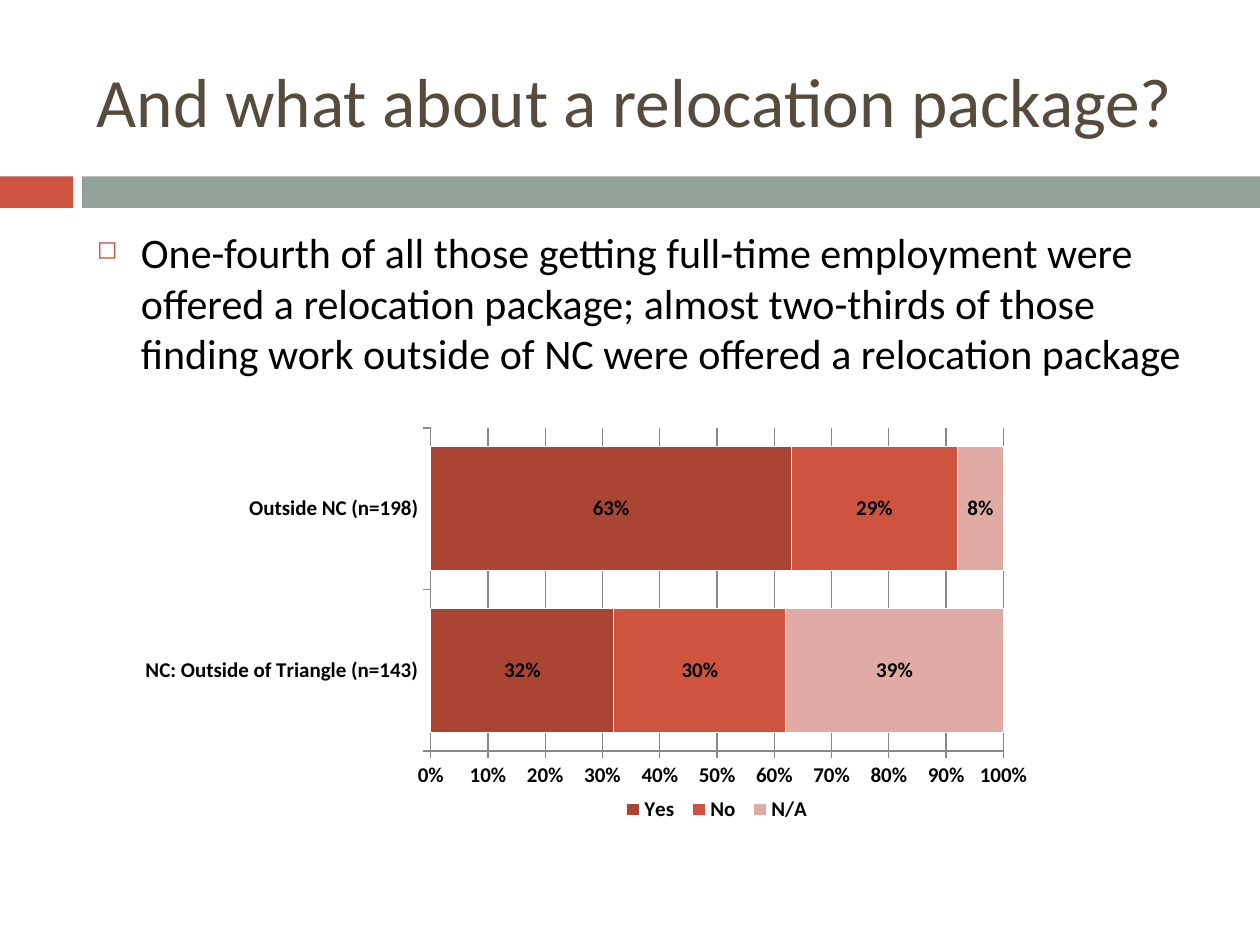
import pptx
import pptx.chart.data
import pptx.dml.color
import pptx.enum.chart
import pptx.enum.shapes
import pptx.enum.text
import pptx.oxml
import pptx.util
from pptx.oxml.ns import qn
from pptx.util import Inches


def color(hex_text):
    return pptx.dml.color.RGBColor.from_string(hex_text)


def set_values(target, values):
    for name, value in values.items():
        setattr(target, name, value)


class SlideBuilder:
    FONT = "Calibri"
    BLACK, WHITE, BROWN, GRAY = "000000", "FFFFFF", "564B3C", "878787"
    RED, SAGE = "CF543F", "93A299"
    SERIES_COLORS = ["AA4433", RED, "E1ABA5"]

    def __init__(self, slide):
        self.slide = slide

    def style_font(self, font, size, hex_text, bold=False):
        set_values(font, {"name": self.FONT, "size": pptx.util.Pt(size), "bold": bold})
        font.color.rgb = color(hex_text)

    def bar(self, left, top, width, height, fill):
        kind = pptx.enum.shapes.MSO_SHAPE.RECTANGLE
        shape = self.slide.shapes.add_shape(kind, *map(Inches, (left, top, width, height)))
        shape.shadow.inherit = False
        shape.fill.solid()
        shape.fill.fore_color.rgb = color(fill)
        shape.line.fill.background()

    def text(self, box, words, size, hex_text, anchor):
        shape = self.slide.shapes.add_textbox(*map(Inches, box))
        set_values(shape.text_frame, {"word_wrap": True, "vertical_anchor": anchor})
        paragraph = shape.text_frame.paragraphs[0]
        run = paragraph.add_run()
        run.text = words
        self.style_font(run.font, size, hex_text)
        return paragraph

    def bullet(self, paragraph, symbol, hex_text, percent, indent):
        paragraph.space_before = pptx.util.Pt(7)
        properties = paragraph._p.get_or_add_pPr()
        properties.set("marL", str(Inches(indent)))
        properties.set("indent", str(-Inches(indent)))
        namespace = pptx.oxml.ns.nsdecls("a")
        for xml in (
            f'<a:buClr {namespace}><a:srgbClr val="{hex_text}"/></a:buClr>',
            f'<a:buSzPct {namespace} val="{percent * 1000}"/>',
            f'<a:buChar {namespace} char="{symbol}"/>',
        ):
            properties.append(pptx.oxml.parse_xml(xml))

    def layout(self, parent, before, x, y, w, h, inner=False):
        """Place a chart part by fractions of the chart area."""
        target = '<c:layoutTarget val="inner"/>' if inner else ""
        xml = (
            f'<c:layout {pptx.oxml.ns.nsdecls("c")}><c:manualLayout>{target}'
            '<c:xMode val="edge"/><c:yMode val="edge"/>'
            f'<c:x val="{x}"/><c:y val="{y}"/><c:w val="{w}"/><c:h val="{h}"/>'
            "</c:manualLayout></c:layout>"
        )
        for old in parent.findall(qn("c:layout")):
            parent.remove(old)
        parent.find(qn(before)).addprevious(pptx.oxml.parse_xml(xml))

    def stacked_bars(self, box, categories, series_values):
        data = pptx.chart.data.CategoryChartData(number_format="0%")
        data.categories = categories
        for name, values in series_values.items():
            data.add_series(name, values)
        kinds = pptx.enum.chart
        chart = self.slide.shapes.add_chart(
            kinds.XL_CHART_TYPE.BAR_STACKED, *map(Inches, box), data
        ).chart
        set_values(chart, {"has_title": False, "has_legend": True})
        self.style_font(chart.font, 12, self.BLACK, bold=True)
        set_values(chart.legend, {
            "position": kinds.XL_LEGEND_POSITION.BOTTOM, "include_in_layout": False})

        # Bars and their labels
        plot = chart.plots[0]
        set_values(plot, {"gap_width": 30, "overlap": 100,
                          "vary_by_categories": False, "has_data_labels": True})
        set_values(plot.data_labels, {
            "show_value": True, "number_format": "0%", "number_format_is_linked": False,
            "position": kinds.XL_LABEL_POSITION.CENTER})
        self.style_font(plot.data_labels.font, 12, self.BLACK, bold=True)
        for series, fill in zip(plot.series, self.SERIES_COLORS):
            series.format.fill.solid()
            series.format.fill.fore_color.rgb = color(fill)
            series.format.line.color.rgb = color(self.WHITE)

        # Axes and gridlines
        value_axis, category_axis = chart.value_axis, chart.category_axis
        set_values(value_axis, {"minimum_scale": 0, "maximum_scale": 1, "major_unit": 0.1,
                                "has_major_gridlines": True})
        set_values(value_axis.tick_labels, {
            "number_format": "0%", "number_format_is_linked": False})
        for axis in (value_axis, category_axis):
            axis.major_tick_mark = kinds.XL_TICK_MARK.OUTSIDE
            axis.format.line.color.rgb = color(self.GRAY)
        value_axis.major_gridlines.format.line.color.rgb = color(self.GRAY)

        # Plot area and legend positions
        plot_area = chart._chartSpace.chart.plotArea
        self.layout(plot_area, "c:barChart", 0.33, 0.02, 0.62, 0.77, inner=True)
        self.layout(chart.legend._element, "c:overlay", 0.53, 0.89, 0.22, 0.08)


def main():
    presentation = pptx.Presentation()
    set_values(presentation, {"slide_width": Inches(10), "slide_height": Inches(7.5)})
    builder = SlideBuilder(presentation.slides.add_slide(presentation.slide_layouts[6]))
    anchors = pptx.enum.text.MSO_ANCHOR

    # Divider band
    builder.bar(0, 1.4, 0.58, 0.25, builder.RED)
    builder.bar(0.65, 1.4, 9.35, 0.25, builder.SAGE)

    # Title and body
    builder.text((0.67, 0.25, 8.92, 1.08), "And what about a relocation package?",
                 39.6, builder.BROWN, anchors.MIDDLE)
    body = builder.text(
        (0.67, 1.75, 8.92, 4.92),
        "One-fourth of all those getting full-time employment were offered a relocation "
        "package; almost two-thirds of those finding work outside of NC were offered a "
        "relocation package",
        24, builder.BLACK, anchors.TOP)
    builder.bullet(body, "◻", builder.RED, 60, 0.35)

    # Relocation offers by place of work
    builder.stacked_bars(
        (1, 3.33, 7.33, 3.33),
        ["NC: Outside of Triangle (n=143)", "Outside NC (n=198)"],
        {"Yes": (0.32, 0.63), "No": (0.3, 0.29), "N/A": (0.39, 0.08)})

    presentation.save("out.pptx")


if __name__ == "__main__":
    main()
